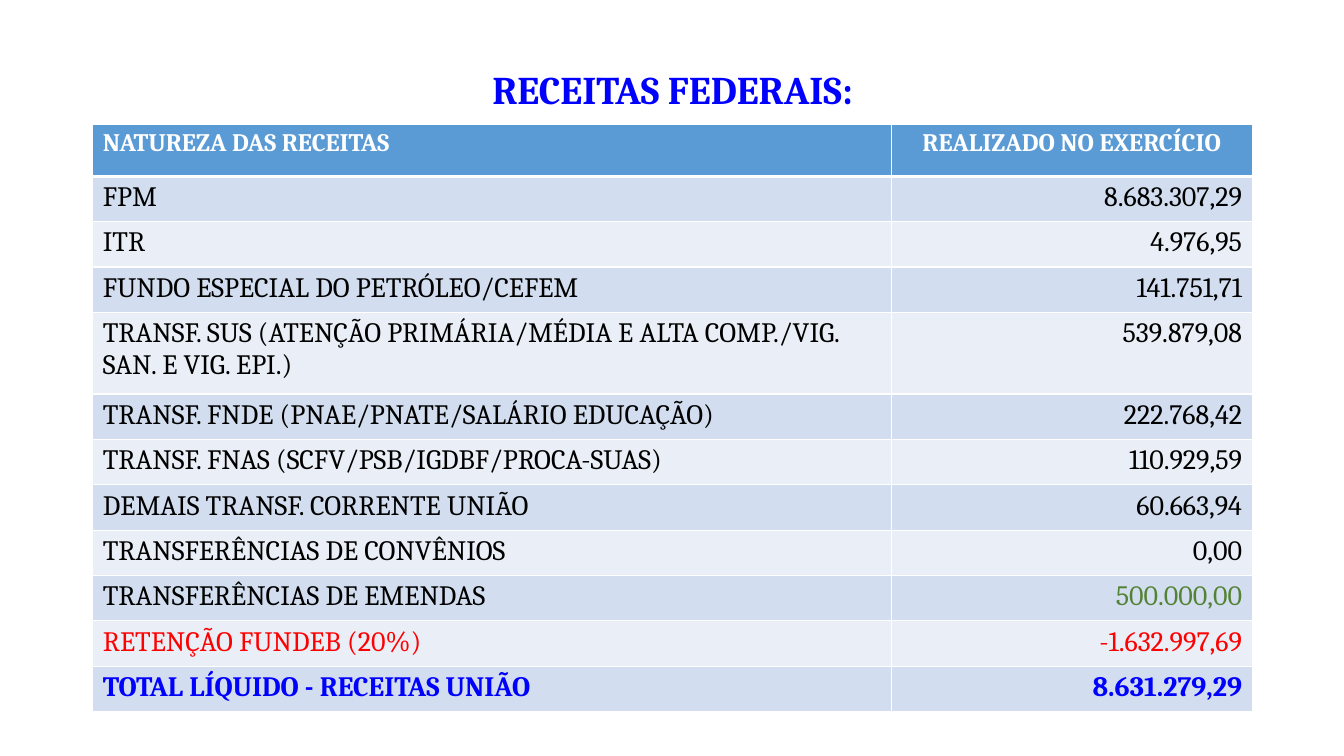
from dataclasses import dataclass

from lxml.etree import SubElement
from pptx import Presentation
from pptx.dml.color import RGBColor
from pptx.enum.text import MSO_ANCHOR, PP_ALIGN
from pptx.oxml.ns import qn
from pptx.slide import Slide
from pptx.table import _Cell
from pptx.text.text import TextFrame
from pptx.util import Inches, Pt

# Grid: lengths in inches
SLIDE_WIDTH, SLIDE_HEIGHT = 13.33, 7.5
LEFT, CONTENT_WIDTH = 0.92, 11.5
TITLE_TOP, TITLE_HEIGHT = 0.55, 0.73
TABLE_TOP = 1.23
COLUMN_WIDTHS = (7.92, 3.58)
HEADER_HEIGHT, LINE_HEIGHT, TWO_LINE_HEIGHT = 0.52, 0.45, 0.81

# Colours
BLACK, WHITE, BLUE, RED, GREEN = "000000", "FFFFFF", "0000FF", "FF0000", "548235"
HEADER_FILL = "5B9BD5"
BAND_FILLS = ("D2DEEF", "EAEFF7")


@dataclass(frozen=True)
class Revenue:
    name: str
    amount: str
    name_color: str = BLACK
    amount_color: str = BLACK
    bold: bool = False
    height: float = LINE_HEIGHT


REVENUES = (
    Revenue("FPM", "8.683.307,29"),
    Revenue("ITR", "4.976,95"),
    Revenue("FUNDO ESPECIAL DO PETRÓLEO/CEFEM", "141.751,71"),
    Revenue("TRANSF. SUS (ATENÇÃO PRIMÁRIA/MÉDIA E ALTA COMP./VIG. SAN. E VIG. EPI.)",
            "539.879,08", height=TWO_LINE_HEIGHT),
    Revenue("TRANSF. FNDE (PNAE/PNATE/SALÁRIO EDUCAÇÃO)", "222.768,42"),
    Revenue("TRANSF. FNAS (SCFV/PSB/IGDBF/PROCA-SUAS)", "110.929,59"),
    Revenue("DEMAIS TRANSF. CORRENTE UNIÃO", "60.663,94"),
    Revenue("TRANSFERÊNCIAS DE CONVÊNIOS", "0,00"),
    Revenue("TRANSFERÊNCIAS DE EMENDAS", "500.000,00", amount_color=GREEN),
    Revenue("RETENÇÃO FUNDEB (20%)", "-1.632.997,69", RED, RED),
    Revenue("TOTAL LÍQUIDO - RECEITAS UNIÃO", "8.631.279,29", BLUE, BLUE, bold=True),
)


def color(value: str) -> RGBColor:
    return RGBColor.from_string(value)


def write(frame: TextFrame, text: str, *, size: float = 20, font_color: str = BLACK,
          bold: bool = False, align: PP_ALIGN = PP_ALIGN.LEFT,
          line_spacing: float = 1.0) -> None:
    paragraph = frame.paragraphs[0]
    paragraph.alignment = align
    paragraph.line_spacing = line_spacing
    run = paragraph.add_run()
    run.text = text
    run.font.name = "Cambria"
    run.font.size = Pt(size)
    run.font.bold = bold
    run.font.color.rgb = color(font_color)


def style_cell(cell: _Cell, fill: str, *, top: float = 1, bottom: float = 1) -> None:
    # Borders come before the fill in the cell properties
    properties = cell._tc.get_or_add_tcPr()
    for side, width in (("L", 1), ("R", 1), ("T", top), ("B", bottom)):
        line = SubElement(properties, qn(f"a:ln{side}"), w=str(Pt(width)))
        solid = SubElement(line, qn("a:solidFill"))
        SubElement(solid, qn("a:srgbClr"), val=WHITE)
    cell.fill.solid()
    cell.fill.fore_color.rgb = color(fill)


def add_title(slide: Slide) -> None:
    box = slide.shapes.add_textbox(Inches(LEFT), Inches(TITLE_TOP),
                                   Inches(CONTENT_WIDTH), Inches(TITLE_HEIGHT))
    box.text_frame.word_wrap = True
    box.text_frame.vertical_anchor = MSO_ANCHOR.MIDDLE
    write(box.text_frame, "RECEITAS FEDERAIS:", size=28, font_color=BLUE, bold=True,
          align=PP_ALIGN.CENTER, line_spacing=0.9)


def add_revenue_table(slide: Slide) -> None:
    heights = [HEADER_HEIGHT] + [revenue.height for revenue in REVENUES]
    table = slide.shapes.add_table(len(heights), len(COLUMN_WIDTHS), Inches(LEFT),
                                   Inches(TABLE_TOP), Inches(CONTENT_WIDTH),
                                   Inches(sum(heights))).table
    for column, width in zip(table.columns, COLUMN_WIDTHS):
        column.width = Inches(width)
    for row, height in zip(table.rows, heights):
        row.height = Inches(height)

    # Header row
    headings = (("NATUREZA DAS RECEITAS", PP_ALIGN.LEFT),
                ("REALIZADO NO EXERCÍCIO", PP_ALIGN.CENTER))
    for index, (heading, align) in enumerate(headings):
        cell = table.cell(0, index)
        style_cell(cell, HEADER_FILL, bottom=3)
        write(cell.text_frame, heading, size=18, font_color=WHITE, bold=True, align=align)

    # Banded revenue rows
    for index, revenue in enumerate(REVENUES):
        name_cell, amount_cell = table.rows[index + 1].cells
        for cell in (name_cell, amount_cell):
            style_cell(cell, BAND_FILLS[index % 2], top=3 if index == 0 else 1)
        write(name_cell.text_frame, revenue.name,
              font_color=revenue.name_color, bold=revenue.bold)
        write(amount_cell.text_frame, revenue.amount, font_color=revenue.amount_color,
              bold=revenue.bold, align=PP_ALIGN.RIGHT)


def main() -> None:
    presentation = Presentation()
    presentation.slide_width = Inches(SLIDE_WIDTH)
    presentation.slide_height = Inches(SLIDE_HEIGHT)
    slide = presentation.slides.add_slide(presentation.slide_layouts[6])
    add_title(slide)
    add_revenue_table(slide)
    presentation.save("out.pptx")


if __name__ == "__main__":
    main()
